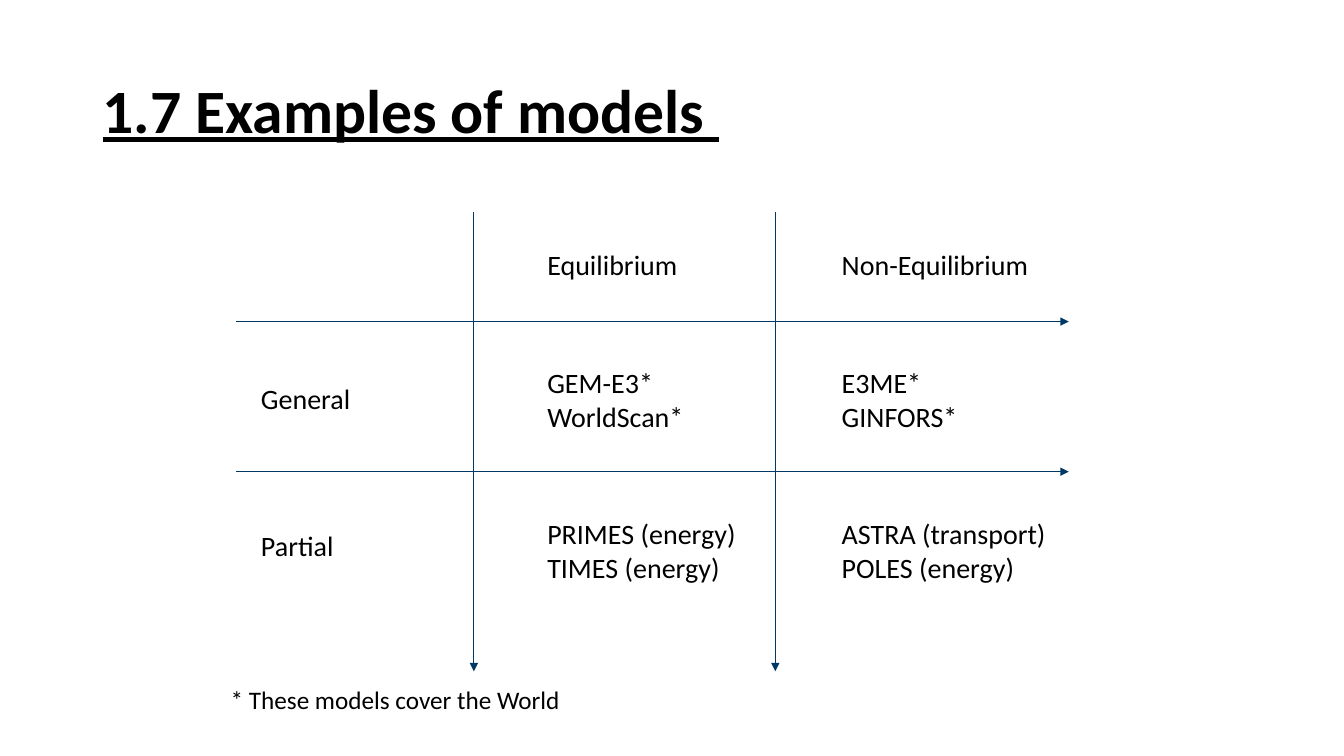
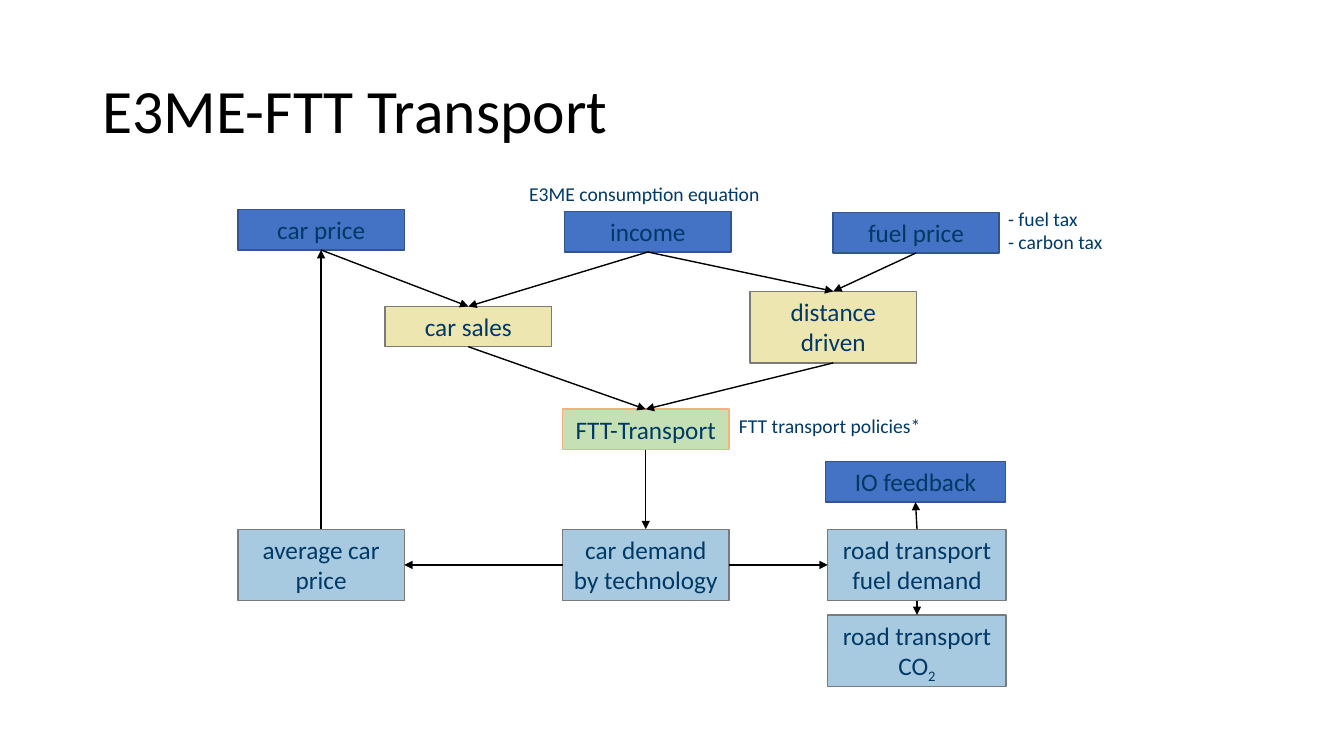
from dataclasses import dataclass
from typing import Any

from pptx import Presentation
from pptx.dml.color import RGBColor
from pptx.enum.shapes import MSO_CONNECTOR, MSO_SHAPE
from pptx.enum.text import MSO_ANCHOR, MSO_AUTO_SIZE, PP_ALIGN
from pptx.oxml.ns import qn
from pptx.util import Inches, Pt
from lxml import etree

STRAIGHT = MSO_CONNECTOR.STRAIGHT
RECTANGLE = MSO_SHAPE.RECTANGLE
MIDDLE, TOP_ANCHOR = MSO_ANCHOR.MIDDLE, MSO_ANCHOR.TOP
GROW = MSO_AUTO_SIZE.SHAPE_TO_FIT_TEXT
LEFT_ALIGN, CENTER = PP_ALIGN.LEFT, PP_ALIGN.CENTER

# Shared colours and text style
BLACK = RGBColor(0x00, 0x00, 0x00)
NAVY = RGBColor(0x00, 0x39, 0x66)
GREY = RGBColor(0x7A, 0x7A, 0x7A)
BLUE = RGBColor(0x44, 0x72, 0xC4)
DARK_BLUE = RGBColor(0x32, 0x54, 0x91)
SAND = RGBColor(0xED, 0xE6, 0xB1)
GREEN = RGBColor(0xC5, 0xE0, 0xB4)
ORANGE = RGBColor(0xF4, 0xB1, 0x83)
LIGHT_BLUE = RGBColor(0xA7, 0xCA, 0xE1)

FONT = "Calibri"
TITLE_FORMAT = {"name": FONT, "size": Pt(44)}
HEADLINE_FORMAT = TITLE_FORMAT | {"bold": True, "underline": True}
CELL_FORMAT = {"name": FONT, "size": Pt(20)}
FOOTNOTE_FORMAT = {"name": FONT, "size": Pt(18)}
NODE_FORMAT = {"name": FONT, "size": Pt(18)}
NOTE_FORMAT = {"name": FONT, "size": Pt(14)}

# Connection sites of a rectangle
TOP, LEFT, BOTTOM, RIGHT = range(4)


@dataclass(frozen=True)
class Label:
    text: str
    left: float
    top: float
    width: float
    height: float


@dataclass(frozen=True)
class NodeStyle:
    fill: RGBColor
    line: RGBColor


@dataclass(frozen=True)
class Node:
    label: Label
    style: NodeStyle
    subscript: str = ""


@dataclass(frozen=True)
class Link:
    source: str
    source_site: int
    target: str
    target_site: int


DRIVER = NodeStyle(BLUE, DARK_BLUE)
DEMAND = NodeStyle(SAND, GREY)
CORE = NodeStyle(GREEN, ORANGE)
RESULT = NodeStyle(LIGHT_BLUE, GREY)


# Drawing functions
def write_text(frame: Any, text: str, values: dict[str, Any], color: RGBColor,
               align: Any = LEFT_ALIGN) -> None:
    for index, line in enumerate(text.split("\n")):
        para = frame.paragraphs[0] if index == 0 else frame.add_paragraph()
        para.alignment = align
        span = para.add_run()
        span.text = line
        for name, value in values.items():
            setattr(span.font, name, value)
        span.font.color.rgb = color


def add_label(page: Any, label: Label, values: dict[str, Any],
              color: RGBColor = BLACK, wrap: bool = True) -> Any:
    box = page.shapes.add_textbox(Inches(label.left), Inches(label.top),
                                  Inches(label.width), Inches(label.height))
    frame = box.text_frame
    frame.word_wrap = wrap
    frame.auto_size = GROW
    frame.vertical_anchor = TOP_ANCHOR
    write_text(frame, label.text, values, color)
    return box


def add_title(page: Any, text: str, values: dict[str, Any]) -> None:
    frame = add_label(page, Label(text, 0.92, 0.4, 11.5, 1.45), values).text_frame
    frame.auto_size = MSO_AUTO_SIZE.NONE
    frame.vertical_anchor = MIDDLE
    frame.paragraphs[0].line_spacing = 0.9


def add_arrow(page: Any, color: RGBColor, width: float,
              start: tuple[float, float] = (0, 0),
              end: tuple[float, float] = (0, 0)) -> Any:
    arrow = page.shapes.add_connector(STRAIGHT, *map(Inches, start + end))
    arrow.line.color.rgb = color
    arrow.line.width = Pt(width)
    properties = arrow._element.spPr
    etree.SubElement(properties.find(qn("a:ln")), qn("a:tailEnd"), type="triangle")
    etree.SubElement(properties, qn("a:effectLst"))
    return arrow


def add_node(page: Any, node: Node) -> Any:
    label = node.label
    box = page.shapes.add_shape(RECTANGLE, Inches(label.left), Inches(label.top),
                                Inches(label.width), Inches(label.height))
    box.shadow.inherit = False
    box.fill.solid()
    box.fill.fore_color.rgb = node.style.fill
    box.line.color.rgb = node.style.line
    box.line.width = Pt(1)
    frame = box.text_frame
    frame.word_wrap = True
    frame.auto_size = GROW
    frame.vertical_anchor = TOP_ANCHOR
    write_text(frame, label.text, NODE_FORMAT, NAVY, CENTER)
    if node.subscript:
        span = frame.paragraphs[0].add_run()
        span.text = node.subscript
        for name, value in NODE_FORMAT.items():
            setattr(span.font, name, value)
        span.font.color.rgb = NAVY
        span._r.get_or_add_rPr().set("baseline", "-25000")
    return box


# Slide 1: grid of model types
GRID_LEFT, GRID_RIGHT, GRID_TOP, GRID_BOTTOM = 2.34, 10.6, 2.1, 6.66
COLUMN_LINES = (4.7, 7.69)
ROW_LINES = (3.19, 4.68)
HEADER_TOP, ONE_LINE, TWO_LINES = 2.41, 0.44, 0.77
COLUMNS = {"Equilibrium": 5.33, "Non-Equilibrium": 8.25}
ROWS = {"General": 3.74, "Partial": 5.19}
MODEL_TOPS = (3.58, 5.08)
MODELS = (
    ("GEM-E3*\nWorldScan*", "E3ME*\nGINFORS*"),
    ("PRIMES (energy)\nTIMES (energy)", "ASTRA (transport)\nPOLES (energy)"),
)


def build_models(page: Any) -> None:
    add_title(page, "1.7 Examples of models ", HEADLINE_FORMAT)
    for x in COLUMN_LINES:
        add_arrow(page, NAVY, 0.75, (x, GRID_TOP), (x, GRID_BOTTOM))
    for y in ROW_LINES:
        add_arrow(page, NAVY, 0.75, (GRID_LEFT, y), (GRID_RIGHT, y))
    labels = [Label(text, left, HEADER_TOP, 2.36, ONE_LINE)
              for text, left in COLUMNS.items()]
    labels += [Label(text, 2.49, top, 1.97, ONE_LINE) for text, top in ROWS.items()]
    labels += [Label(text, left, top, 2.5, TWO_LINES)
               for top, row in zip(MODEL_TOPS, MODELS)
               for left, text in zip(COLUMNS.values(), row)]
    for label in labels:
        add_label(page, label, CELL_FORMAT)
    add_label(page, Label("* These models cover the World", 2.19, 6.74, 3.63, 0.4),
              FOOTNOTE_FORMAT, wrap=False)


# Slide 2: flow chart of the transport model
WIDTH, WIDE = 1.65, 1.77
LOW, HIGH = 0.4, 0.71
FLOW_LEFT, FLOW_MIDDLE, FLOW_RIGHT, FLOW_TOP = 2.36, 5.58, 8.21, 5.25

NODES = {
    "price": Node(Label("car price", FLOW_LEFT, 2.08, WIDTH, LOW), DRIVER),
    "income": Node(Label("income", 5.6, 2.1, WIDTH, LOW), DRIVER),
    "fuel": Node(Label("fuel price", 8.26, 2.11, WIDTH, LOW), DRIVER),
    "sales": Node(Label("car sales", 3.82, 3.04, WIDTH, LOW), DEMAND),
    "distance": Node(Label("distance driven", 7.44, 2.89, WIDTH, HIGH), DEMAND),
    "transport": Node(Label("FTT-Transport", FLOW_MIDDLE, 4.06, WIDTH, LOW), CORE),
    "average": Node(
        Label("average car price", FLOW_LEFT, FLOW_TOP, WIDTH, HIGH), RESULT),
    "technology": Node(
        Label("car demand by technology", FLOW_MIDDLE, FLOW_TOP, WIDTH, HIGH), RESULT),
    "road": Node(
        Label("road transport fuel demand", FLOW_RIGHT, FLOW_TOP, WIDE, HIGH), RESULT),
    "carbon": Node(
        Label("road transport CO", FLOW_RIGHT, 6.1, WIDE, HIGH), RESULT, "2"),
    "feedback": Node(Label("IO feedback", 8.19, 4.58, 1.78, LOW), DRIVER),
}

LINKS = (
    Link("income", BOTTOM, "sales", TOP),
    Link("price", BOTTOM, "sales", TOP),
    Link("fuel", BOTTOM, "distance", TOP),
    Link("income", BOTTOM, "distance", TOP),
    Link("average", TOP, "price", BOTTOM),
    Link("transport", BOTTOM, "technology", TOP),
    Link("technology", LEFT, "average", RIGHT),
    Link("technology", RIGHT, "road", LEFT),
    Link("sales", BOTTOM, "transport", TOP),
    Link("distance", BOTTOM, "transport", TOP),
    Link("road", BOTTOM, "carbon", TOP),
    Link("road", TOP, "feedback", BOTTOM),
)

NOTES = (
    Label("- fuel tax\n- carbon tax", 9.9, 2, 1.34, 0.57),
    Label("E3ME consumption equation", 5.15, 1.76, 2.9, 0.34),
    Label("FTT transport policies*", 7.23, 4.06, 2.39, 0.34),
)


def build_transport(page: Any) -> None:
    add_title(page, "E3ME-FTT Transport", TITLE_FORMAT)
    boxes = {name: add_node(page, node) for name, node in NODES.items()}
    for link in LINKS:
        arrow = add_arrow(page, BLACK, 1)
        arrow.begin_connect(boxes[link.source], link.source_site)
        arrow.end_connect(boxes[link.target], link.target_site)
    for note in NOTES:
        add_label(page, note, NOTE_FORMAT, NAVY)


def main() -> None:
    deck = Presentation()
    deck.slide_width, deck.slide_height = Inches(13.33), Inches(7.5)
    blank = deck.slide_layouts[6]
    for build in (build_models, build_transport):
        build(deck.slides.add_slide(blank))
    deck.save("out.pptx")


if __name__ == "__main__":
    main()
